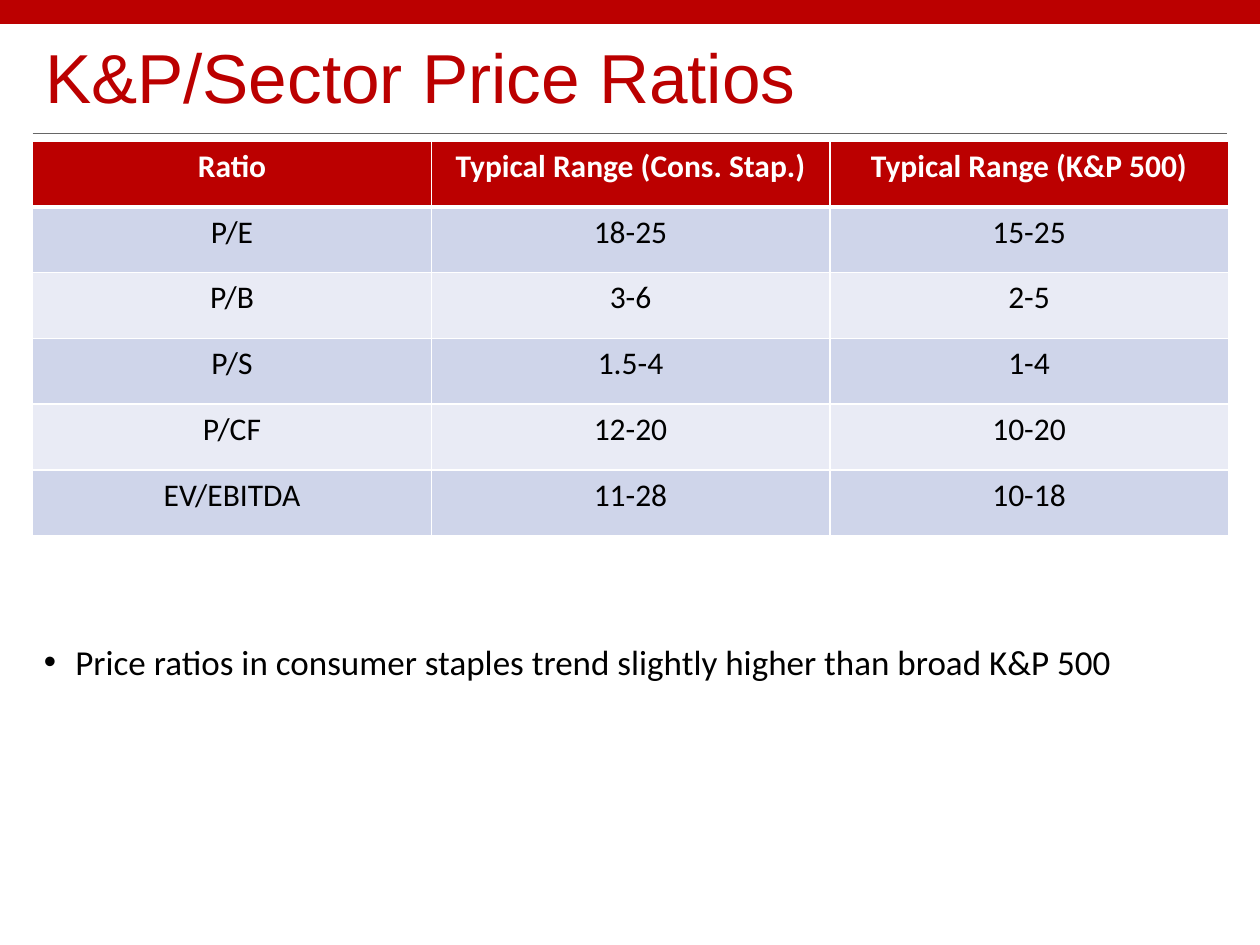
from pptx import Presentation
from pptx.dml.color import RGBColor
from pptx.enum.shapes import MSO_CONNECTOR, MSO_SHAPE
from pptx.enum.text import MSO_ANCHOR, PP_ALIGN
from pptx.oxml.ns import qn
from pptx.util import Inches, Pt
from lxml.etree import SubElement

# Content
TITLE = "K&P/Sector Price Ratios"
RATIOS = [
    ("Ratio", "Typical Range (Cons. Stap.)", "Typical Range (K&P 500)"),
    ("P/E", "18-25", "15-25"),
    ("P/B", "3-6", "2-5"),
    ("P/S", "1.5-4", "1-4"),
    ("P/CF", "12-20", "10-20"),
    ("EV/EBITDA", "11-28", "10-18"),
]
TAKEAWAY = "Price ratios in consumer staples trend slightly higher than broad K&P 500"

THEME = {
    "red": RGBColor(0xBB, 0x00, 0x00),
    "rule": RGBColor(0x66, 0x66, 0x66),
    "bands": [RGBColor(0xE9, 0xEB, 0xF5), RGBColor(0xCF, 0xD5, 0xEA)],
    "border": "FFFFFF",
    "title": {"name": "Arial", "size": Pt(39.6)},
    "header": {"name": "Calibri", "size": Pt(18), "bold": True},
    "cell": {"name": "Calibri", "size": Pt(18), "bold": False},
    "body": {"name": "Calibri", "size": Pt(20)},
    "white": RGBColor(0xFF, 0xFF, 0xFF),
    "black": RGBColor(0x00, 0x00, 0x00),
}
LEFT, WIDTH = 0.26, 9.49
ROW_HEIGHT = 3.13 / len(RATIOS)


def write(para, text, style, color):
    span = para.add_run()
    span.text = text
    for name, value in THEME[style].items():
        setattr(span.font, name, value)
    span.font.color.rgb = color


def add_text_box(page, left, top, height, anchor):
    box = page.shapes.add_textbox(Inches(left), Inches(top), Inches(WIDTH), Inches(height))
    box.text_frame.word_wrap = True
    box.text_frame.vertical_anchor = anchor
    para = box.text_frame.paragraphs[0]
    para.line_spacing = 0.9
    return para


def set_borders(cell, widths):
    properties = cell._tc.get_or_add_tcPr()
    for position, (side, width) in enumerate(widths.items()):
        line = properties.makeelement(qn(f"a:{side}"), {"w": str(Pt(width))})
        fill = SubElement(line, qn("a:solidFill"))
        SubElement(fill, qn("a:srgbClr"), val=THEME["border"])
        properties.insert(position, line)


deck = Presentation()
deck.slide_width, deck.slide_height = Inches(10), Inches(7.5)
page = deck.slides.add_slide(deck.slide_layouts[6])

# Rule under the title
rule = page.shapes.add_connector(
    MSO_CONNECTOR.STRAIGHT, Inches(LEFT), Inches(1.06), Inches(10 - LEFT), Inches(1.06))
rule.line.color.rgb = THEME["rule"]
rule.line.width = Pt(0.5)
SubElement(rule._element.spPr, qn("a:effectLst"))

# Top band
band = page.shapes.add_shape(MSO_SHAPE.RECTANGLE, 0, 0, deck.slide_width, Inches(0.19))
band.shadow.inherit = False
band.fill.solid()
band.fill.fore_color.rgb = THEME["red"]
band.line.fill.background()

# Title
title = add_text_box(page, LEFT, 0.26, 0.73, MSO_ANCHOR.BOTTOM)
write(title, TITLE, "title", THEME["red"])

# Ratio table
table = page.shapes.add_table(
    len(RATIOS), len(RATIOS[0]), Inches(LEFT), Inches(1.12),
    Inches(WIDTH), Inches(ROW_HEIGHT * len(RATIOS))).table
for row_number, values in enumerate(RATIOS):
    table.rows[row_number].height = Inches(ROW_HEIGHT)
    header = row_number == 0
    for column_number, value in enumerate(values):
        cell = table.cell(row_number, column_number)
        cell.fill.solid()
        cell.fill.fore_color.rgb = THEME["red"] if header else THEME["bands"][row_number % 2]
        set_borders(cell, {"lnL": 1, "lnR": 1, "lnT": 3 if row_number == 1 else 1,
                           "lnB": 3 if header else 1})
        para = cell.text_frame.paragraphs[0]
        para.alignment = PP_ALIGN.CENTER
        write(para, value, "header" if header else "cell",
              THEME["white"] if header else THEME["black"])

# Takeaway bullet
takeaway = add_text_box(page, 0.25, 5.07, 0.71, MSO_ANCHOR.TOP)
properties = takeaway._p.get_or_add_pPr()
properties.set("marL", str(Inches(0.25)))
properties.set("indent", str(-Inches(0.25)))
SubElement(properties, qn("a:buFont"), typeface="Arial")
SubElement(properties, qn("a:buChar"), char="•")
write(takeaway, TAKEAWAY, "body", THEME["black"])

deck.save("out.pptx")
